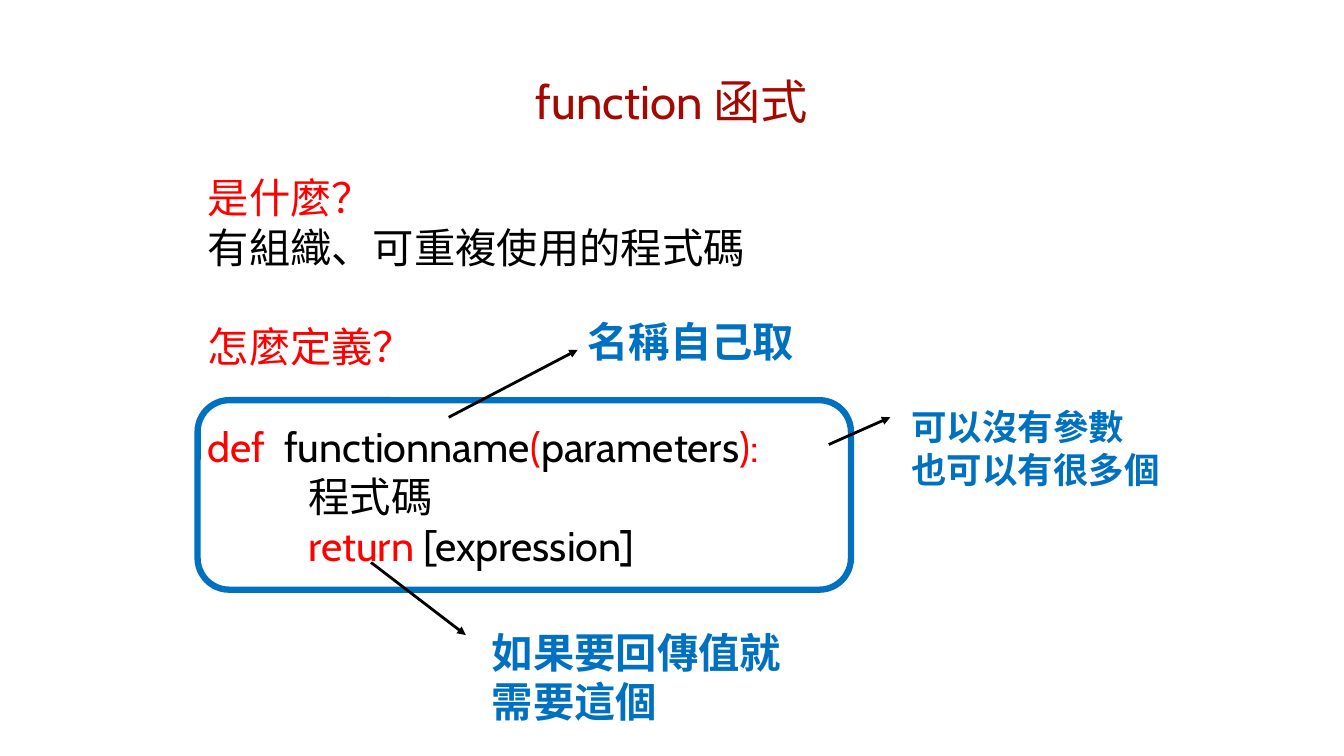
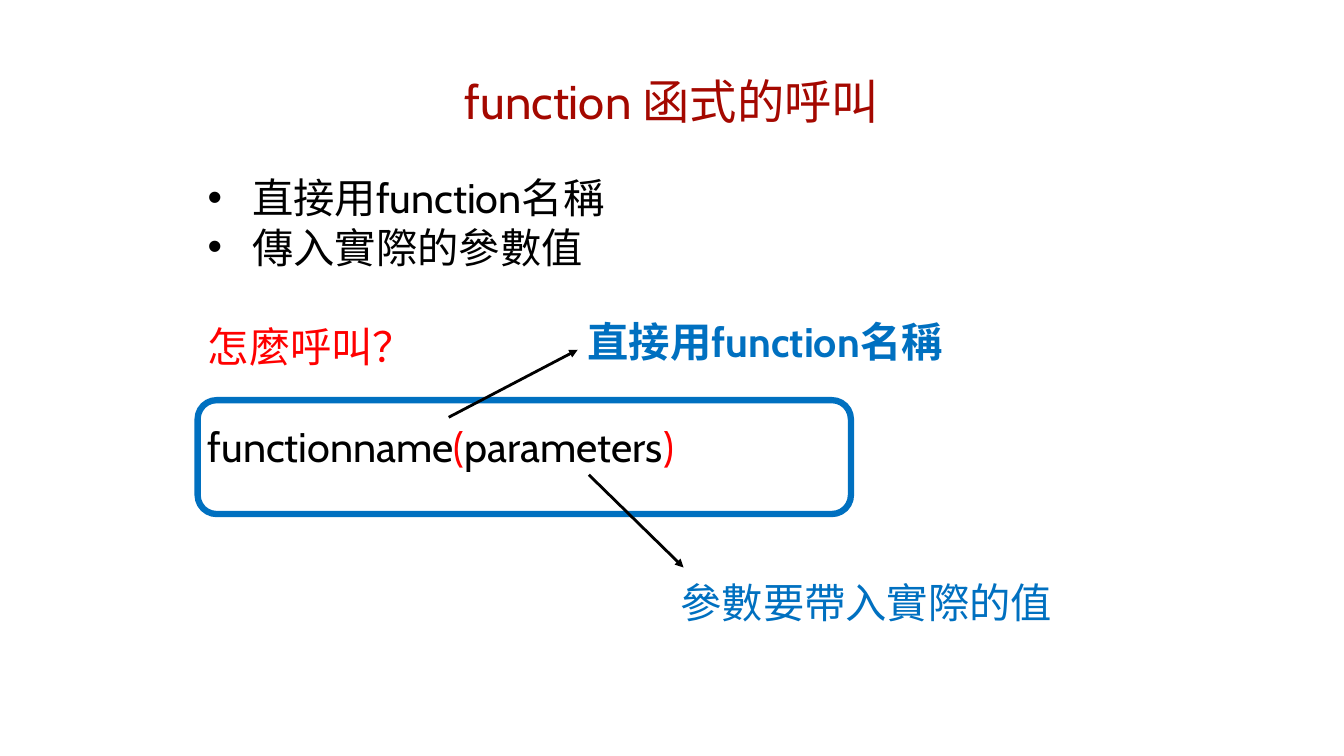
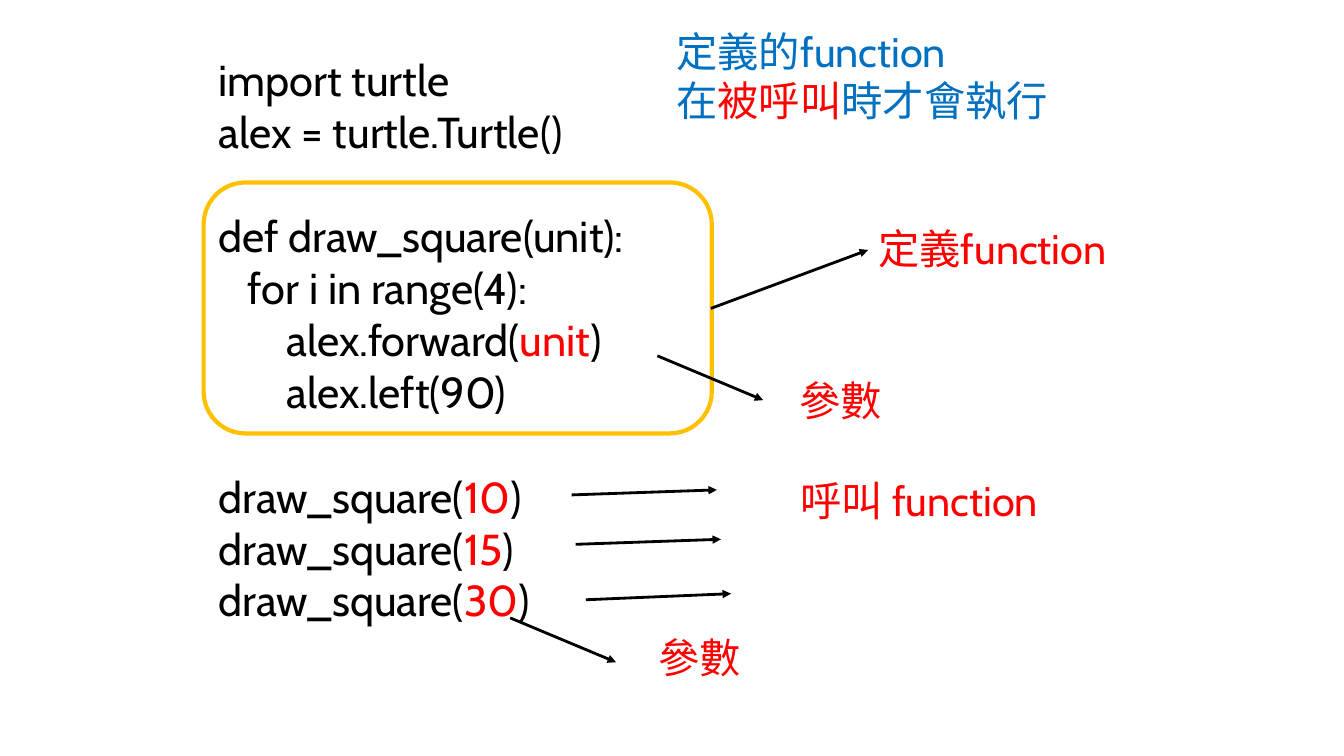
"""Build three slides that explain how functions are defined and called."""
from lxml.etree import SubElement
from pptx import Presentation
from pptx.dml.color import RGBColor
from pptx.enum.shapes import MSO_CONNECTOR, MSO_SHAPE
from pptx.enum.text import MSO_ANCHOR, MSO_AUTO_SIZE, PP_ALIGN
from pptx.oxml.ns import qn
from pptx.util import Inches, Pt

FONT = "Cabin"
BLACK, RED, BLUE, GOLD, WINE = "000000", "FF0000", "0070C0", "FFC000", "A40800"
SIZE, LEADING = 29.5, 1.215
TITLE = (3.08, 0.72, 7.17, 0.56)
NAMING = (4.45, 4.14, 5.73, 3.47)

# A bar switches between the base colour and red; a pair adds a paragraph kind.
SLIDES = [
    {
        "title": "function 函式",
        "body": ["|是什麼？", "有組織、可重複使用的程式碼", ("|怎麼定義？", "gap"),
                 ("|def|  functionname|(|parameters|):", "gap"),
                 ("程式碼", "indent"), ("|return| [expression]", "indent")],
        "area": (1.96, 1.66, 7.2, 4.08), "size": SIZE,
        "frame": (1.96, 3.97, 6.48, 1.88), "edge": (BLUE, 4.5),
        "arrows": [NAMING, (8.22, 4.41, 8.83, 4.14), (3.68, 5.58, 4.62, 6.3)],
        "labels": [
            (["名稱自己取"], (5.73, 3.09, 3.1, 0.6), BLUE, SIZE, True),
            (["可以沒有參數", "也可以有很多個"], (8.94, 3.97, 3.1, 0.95), BLUE, 25.3, True),
            (["如果要回傳值就需要這個"], (4.78, 6.17, 3.1, 1.09), BLUE, SIZE, True),
        ],
    },
    {
        "title": "function 函式的呼叫",
        "body": [("直接用function名稱", "bullet"), ("傳入實際的參數值", "bullet"),
                 ("|怎麼呼叫？", "gap"), ("functionname|(|parameters|)", "gap")],
        "area": (1.96, 1.66, 7.2, 3.08), "size": SIZE,
        "frame": (1.96, 3.97, 6.48, 1.13), "edge": (BLUE, 4.5),
        "arrows": [NAMING, (5.84, 4.71, 6.78, 5.63)],
        "labels": [
            (["直接用function名稱"], (5.73, 3.09, 4.15, 0.6), BLUE, SIZE, True),
            (["參數要帶入實際的值"], (6.65, 5.68, 4.04, 0.6), BLUE, SIZE, False),
        ],
    },
    {
        "title": None,
        "body": ["import turtle", "alex = turtle.Turtle()",
                 ("def draw_square(unit):", "gap"), "   for i in range(4):",
                 "       alex.forward(|unit|)", "       alex.left(90)",
                 ("draw_square(|10|)", "gap"), "draw_square(|15|)", "draw_square(|30|)"],
        "area": (2.07, 0.48, 5.69, 5.9), "size": 30.9,
        "frame": (2.02, 1.81, 5.04, 2.49), "edge": (GOLD, 3),
        "arrows": [(7.05, 3.06, 8.61, 2.48), (5.67, 4.91, 7.11, 4.86),
                   (5.71, 5.4, 7.15, 5.35), (5.81, 5.95, 7.25, 5.89),
                   (5.06, 6.13, 6.11, 6.57), (6.52, 3.53, 7.57, 3.97)],
        "labels": [
            (["定義function"], (8.61, 2.17, 2.49, 0.6), RED, SIZE, False),
            (["呼叫 function"], (7.84, 4.67, 3.26, 0.6), RED, SIZE, False),
            (["定義的function", "在|被呼叫|時才會執行"], (6.61, 0.21, 4.93, 1.09), BLUE, SIZE, False),
            (["參數"], (6.43, 6.22, 2.49, 0.6), RED, SIZE, False),
            (["參數"], (7.83, 3.67, 2.49, 0.6), RED, SIZE, False),
        ],
    },
]


def rgb(code):
    return RGBColor.from_string(code)


def inches(nums):
    return [Inches(n) for n in nums]


def place(shape, area):
    shape.left, shape.top, shape.width, shape.height = inches(area)


def layout(para, kind, size):
    props = para._p.get_or_add_pPr()
    margin, hang = {"indent": (1, 0), "bullet": (0.44, -0.44)}.get(kind, (0, 0))
    props.set("marL", str(Inches(margin)))
    props.set("indent", str(Inches(hang)))
    if kind == "bullet":
        SubElement(props, qn("a:buFont")).set("typeface", "Arial")
        SubElement(props, qn("a:buChar")).set("char", "•")
    else:
        SubElement(props, qn("a:buNone"))
    para.space_before = Pt(round(size * LEADING, 1) if kind == "gap" else 0)


def write(shape, lines, color, size, bold=False, align=PP_ALIGN.LEFT):
    frame = shape.text_frame
    frame.word_wrap = True
    frame.auto_size = MSO_AUTO_SIZE.NONE
    frame.vertical_anchor = MSO_ANCHOR.TOP
    for num, line in enumerate(lines):
        text, kind = (line, "") if isinstance(line, str) else line
        para = frame.add_paragraph() if num else frame.paragraphs[0]
        layout(para, kind, size)
        para.alignment = align
        font = para.font
        font.name, font.size, font.bold = FONT, Pt(size), bold
        font.color.rgb = rgb(color)
        for part, piece in enumerate(text.split("|")):
            if piece:
                run = para.add_run()
                run.text = piece
                if part % 2:
                    run.font.color.rgb = rgb(RED)


def head(slide, text):
    title = slide.shapes.title
    if not text:
        title._element.getparent().remove(title._element)
        return
    place(title, TITLE)
    frame = title.text_frame
    frame.margin_left = frame.margin_right = frame.margin_top = frame.margin_bottom = 0
    write(title, [text], WINE, 33.8, align=PP_ALIGN.CENTER)


def outline(slide, area, color, width):
    box = slide.shapes.add_shape(MSO_SHAPE.ROUNDED_RECTANGLE, *inches(area))
    box.shadow.inherit = False
    box.fill.background()
    box.line.color.rgb = rgb(color)
    box.line.width = Pt(width)


def arrow(slide, ends):
    link = slide.shapes.add_connector(MSO_CONNECTOR.STRAIGHT, *inches(ends))
    link.line.color.rgb = rgb(BLACK)
    link.line.width = Pt(2)
    props = link._element.spPr
    SubElement(props.find(qn("a:ln")), qn("a:tailEnd")).set("type", "triangle")
    SubElement(props, qn("a:effectLst"))


def build(deck, data):
    slide = deck.slides.add_slide(deck.slide_layouts[1])
    body = slide.placeholders[1]
    head(slide, data["title"])
    place(body, data["area"])
    write(body, data["body"], BLACK, data["size"])
    outline(slide, data["frame"], *data["edge"])
    for ends in data["arrows"]:
        arrow(slide, ends)
    for lines, area, color, size, bold in data["labels"]:
        write(slide.shapes.add_textbox(*inches(area)), lines, color, size, bold)


def main():
    deck = Presentation()
    deck.slide_width, deck.slide_height = Inches(13.33), Inches(7.5)
    for data in SLIDES:
        build(deck, data)
    deck.save("out.pptx")


if __name__ == "__main__":
    main()
